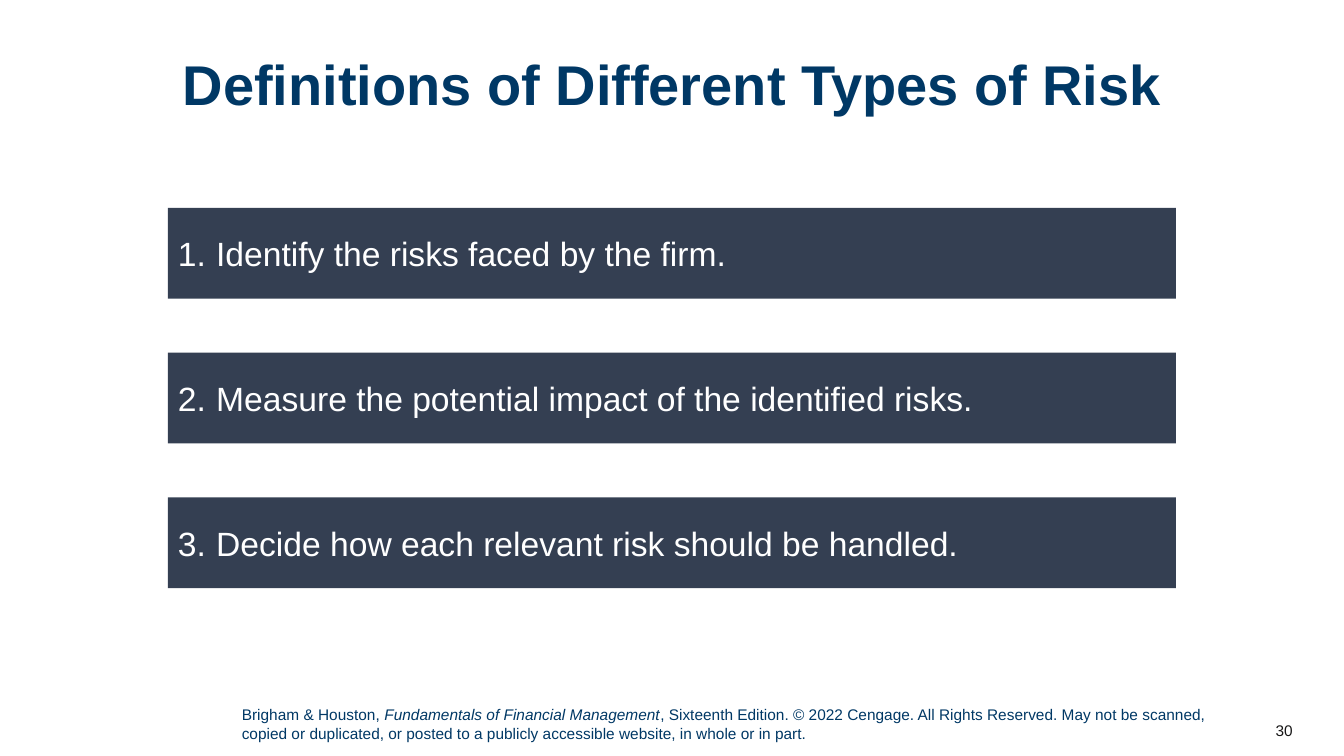
from lxml.etree import SubElement
from pptx import Presentation
from pptx.dml.color import RGBColor as RGB
from pptx.enum.shapes import MSO_SHAPE as SHAPE
from pptx.enum.text import MSO_ANCHOR as ANCHOR, PP_ALIGN as ALIGN
from pptx.oxml.ns import qn
from pptx.util import Inches, Pt

COLORS = {"navy": "003865", "slate": "343F52", "white": "FFFFFF", "ink": "181717"}

prs = Presentation()
prs.slide_width, prs.slide_height = Inches(13.33), Inches(7.5)
col, row = prs.slide_width / 100, prs.slide_height / 100
s = prs.slides.add_slide(prs.slide_layouts[6])


def add_text(*runs, at, size, color, fill=None, bold=False, italic_run=None,
             align=ALIGN.LEFT, anchor=ANCHOR.TOP, spacing=None, number=None):
    x, y, w, h = at
    box = [int(x * col), int(y * row), int(w * col), int(h * row)]
    if fill:
        sp = s.shapes.add_shape(SHAPE.RECTANGLE, *box)
        sp.shadow.inherit = False
        sp.fill.solid()
        sp.fill.fore_color.rgb = RGB.from_string(COLORS[fill])
        sp.line.fill.background()
    else:
        sp = s.shapes.add_textbox(*box)
    tf = sp.text_frame
    tf.word_wrap = True
    tf.vertical_anchor = anchor
    p = tf.paragraphs[0]
    p.alignment = align
    p.line_spacing = spacing
    if number:
        pPr = p._p.get_or_add_pPr()
        indent = Inches(0.38)
        pPr.set("marL", str(indent))
        pPr.set("indent", str(-indent))
        SubElement(SubElement(pPr, qn("a:buClr")), qn("a:srgbClr"), val=COLORS[color])
        SubElement(pPr, qn("a:buFont"), typeface="Arial")
        SubElement(pPr, qn("a:buAutoNum"), type="arabicPeriod", startAt=str(number))
    for i, text in enumerate(runs):
        r = p.add_run()
        r.text = text
        r.font.name = "Arial"
        r.font.size = Pt(size)
        r.font.bold = bold
        r.font.italic = i == italic_run
        r.font.color.rgb = RGB.from_string(COLORS[color])


add_text("30", at=(90.92, 94, 6, 5.33), size=11, color="ink",
         align=ALIGN.RIGHT, anchor=ANCHOR.MIDDLE)
add_text("Brigham & Houston, ", "Fundamentals of Financial Management",
         ", Sixteenth Edition. © 2022 Cengage. All Rights Reserved. May not be scanned, "
         "copied or duplicated, or posted to a publicly accessible website, "
         "in whole or in part.",
         at=(17.25, 92.67, 73.52, 6.27), size=11, color="navy", italic_run=1)
add_text("Definitions of Different Types of Risk", at=(3.9, 6.93, 92.2, 17.73),
         size=40, color="navy", bold=True, align=ALIGN.CENTER, spacing=0.9)

steps = [
    "Identify the risks faced by the firm.",
    "Measure the potential impact of the identified risks.",
    "Decide how each relevant risk should be handled.",
]
for i, step in enumerate(steps):
    add_text(step, at=(12.5, 27.5 + 19.15 * i, 75, 12), size=24, color="white",
             fill="slate", anchor=ANCHOR.MIDDLE, number=i + 1)

prs.save("out.pptx")
